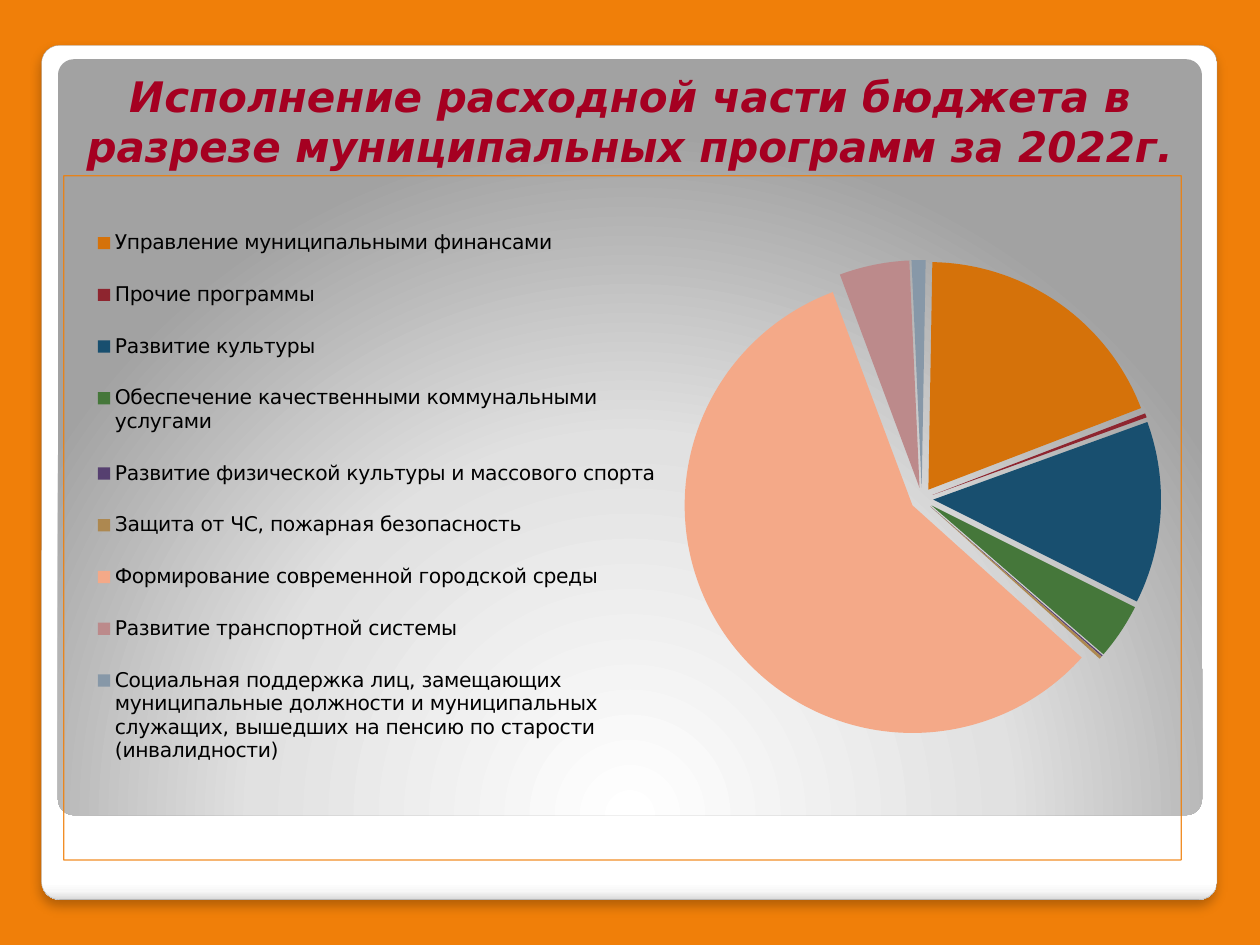
from dataclasses import dataclass

from lxml import etree
from pptx import Presentation
from pptx.chart.data import CategoryChartData
from pptx.dml.color import RGBColor
from pptx.enum.chart import XL_CHART_TYPE, XL_LEGEND_POSITION
from pptx.enum.shapes import MSO_SHAPE
from pptx.enum.text import MSO_ANCHOR, MSO_AUTO_SIZE, PP_ALIGN
from pptx.oxml import parse_xml
from pptx.oxml.ns import nsdecls, qn
from pptx.util import Inches, Pt


@dataclass(frozen=True)
class Theme:
    font: str = "DejaVu Sans"
    background: str = "F07F09"
    title: str = "A50021"
    text: str = "000000"
    frame_line: str = "A4A4A4"
    title_size: float = 24
    chart_size: float = 18
    legend_size: float = 11.6


THEME = Theme()
TITLE = "Исполнение расходной части бюджета в разрезе муниципальных программ за 2022г."
PROGRAMS = [
    ("Управление муниципальными финансами", 19, "D5720A"),
    ("Прочие программы", 0.3, "8E252F"),
    ("Развитие культуры", 13, "184F6F"),
    ("Обеспечение качественными коммунальными услугами", 4, "45773A"),
    ("Развитие физической культуры и массового спорта", 0.1, "564070"),
    ("Защита от ЧС, пожарная безопасность", 0.2, "AD8850"),
    ("Формирование современной городской среды", 58, "F4A988"),
    ("Развитие транспортной системы", 5, "BC8A8B"),
    ("Социальная поддержка лиц, замещающих муниципальные должности и муниципальных "
     "служащих, вышедших на пенсию по старости (инвалидности)", 1, "8798A8"),
]
LINEAR_DOWN = '<a:lin ang="5400000" scaled="0"/>'
CIRCLE_FROM_BELOW = ('<a:path path="circle"><a:fillToRect l="50000" t="175000" '
                     'r="50000" b="-75000"/></a:path>')


def color(value):
    return RGBColor.from_string(value)


def add_panel(slide, left, top, width, height, stops, direction):
    """Add a rounded panel with a gradient of (percent, colour) stops."""
    panel = slide.shapes.add_shape(MSO_SHAPE.ROUNDED_RECTANGLE, Inches(left), Inches(top),
                                   Inches(width), Inches(height))
    panel.adjustments[0] = 0.021
    panel.shadow.inherit = False
    panel.line.fill.background()
    panel.fill.background()
    stop_xml = "".join(f'<a:gs pos="{percent * 1000}"><a:srgbClr val="{value}"/></a:gs>'
                       for percent, value in stops)
    gradient = parse_xml(f'<a:gradFill {nsdecls("a")} rotWithShape="1">'
                         f'<a:gsLst>{stop_xml}</a:gsLst>{direction}</a:gradFill>')
    properties = panel._element.spPr
    properties.replace(properties.find(qn("a:noFill")), gradient)
    return panel


def add_frame(slide):
    frame = add_panel(slide, 0.33, 0.36, 9.33, 6.78,
                      [(0, "FFFFFF"), (98, "FFFFFF"), (99, "F7F7F7"), (100, "DADADA")],
                      LINEAR_DOWN)
    frame.line.color.rgb = color(THEME.frame_line)
    frame.line.width = Pt(0.16)
    frame._element.spPr.find(qn("a:effectLst")).append(parse_xml(
        f'<a:outerShdw {nsdecls("a")} blurRad="{Pt(6)}" dist="{Pt(4)}" dir="5400000" '
        'rotWithShape="0"><a:srgbClr val="000000"><a:alpha val="25000"/></a:srgbClr>'
        '</a:outerShdw>'))


def set_title(slide):
    title = slide.shapes.title
    title.left, title.top, title.width, title.height = map(Inches, (0.5, 0.58, 9, 0.83))
    slide.shapes._spTree.append(title._element)  # in front of the panels
    frame = title.text_frame
    frame.text = TITLE
    frame.word_wrap = True
    frame.auto_size = MSO_AUTO_SIZE.NONE
    frame.vertical_anchor = MSO_ANCHOR.BOTTOM
    paragraph = frame.paragraphs[0]
    paragraph.alignment = PP_ALIGN.CENTER
    set_font(paragraph.font, THEME.title_size, THEME.title)
    paragraph.font.bold = paragraph.font.italic = True


def set_font(font, size, value):
    font.name = THEME.font
    font.size = Pt(size)
    font.color.rgb = color(value)


def manual_layout(left, top, width, height, inner=False):
    """Return a chart layout in fractions of the chart area."""
    target = '<c:layoutTarget val="inner"/>' if inner else ""
    return parse_xml(
        f'<c:layout {nsdecls("c")}><c:manualLayout>{target}'
        '<c:xMode val="edge"/><c:yMode val="edge"/>'
        f'<c:x val="{left}"/><c:y val="{top}"/><c:w val="{width}"/><c:h val="{height}"/>'
        '</c:manualLayout></c:layout>')


def set_layout(element, layout, index):
    for existing in element.findall(qn("c:layout")):
        element.remove(existing)
    element.insert(index, layout)


def add_legend(chart):
    chart.has_legend = True
    legend = chart.legend
    legend.position = XL_LEGEND_POSITION.LEFT
    legend.include_in_layout = False
    set_font(legend.font, THEME.legend_size, THEME.text)
    set_layout(legend._element, manual_layout(0.02, 0.04, 0.52, 0.86), 1)


def format_pie(chart):
    plot = chart.plots[0]
    plot.vary_by_categories = True
    series = plot.series[0]
    for index, (_, _, value) in enumerate(PROGRAMS):
        fill = series.points[index].format.fill
        fill.solid()
        fill.fore_color.rgb = color(value)
    explosion = etree.Element(qn("c:explosion"), val="5")
    series._element.find(qn("c:dPt")).addprevious(explosion)
    pie = plot._element
    for existing in pie.findall(qn("c:firstSliceAng")):
        pie.remove(existing)
    etree.SubElement(pie, qn("c:firstSliceAng"), val="1")
    set_layout(pie.getparent(), manual_layout(0.554, 0.098, 0.428, 0.749, inner=True), 0)


def add_border(chart):
    border = parse_xml(
        f'<c:spPr {nsdecls("c", "a")}><a:noFill/><a:ln w="{Pt(0.75)}"><a:solidFill>'
        f'<a:srgbClr val="{THEME.background}"><a:alpha val="87000"/></a:srgbClr>'
        '</a:solidFill></a:ln></c:spPr>')
    chart._chartSpace.find(qn("c:txPr")).addprevious(border)


def add_pie(slide):
    data = CategoryChartData()
    data.categories = [name for name, _, _ in PROGRAMS]
    data.add_series("Series 1", [share for _, share, _ in PROGRAMS])
    chart = slide.shapes.add_chart(XL_CHART_TYPE.PIE, Inches(0.5), Inches(1.39),
                                   Inches(8.88), Inches(5.44), data).chart
    chart.has_title = False
    set_font(chart.font, THEME.chart_size, THEME.text)
    add_legend(chart)
    format_pie(chart)
    add_border(chart)


def main():
    presentation = Presentation()
    presentation.slide_width, presentation.slide_height = Inches(10), Inches(7.5)
    slide = presentation.slides.add_slide(presentation.slide_layouts[5])
    slide.background.fill.solid()
    slide.background.fill.fore_color.rgb = color(THEME.background)
    add_frame(slide)
    add_panel(slide, 0.46, 0.47, 9.08, 6,
              [(0, "FFFFFF"), (55, "E1E1E1"), (100, "A2A2A2")], CIRCLE_FROM_BELOW)
    set_title(slide)
    add_pie(slide)
    presentation.save("out.pptx")


if __name__ == "__main__":
    main()
